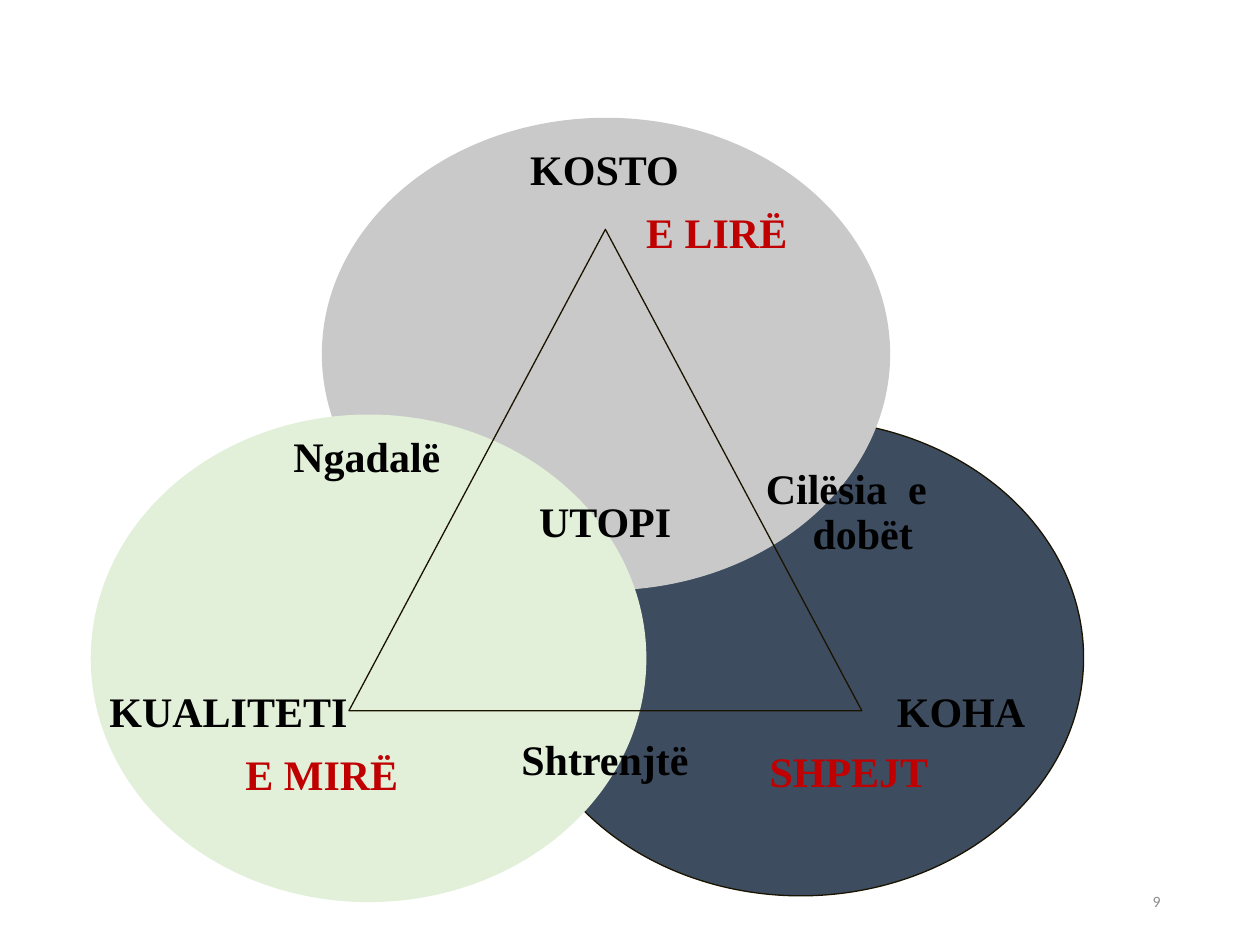
from typing import NamedTuple, Optional

from pptx import Presentation
from pptx.dml.color import RGBColor
from pptx.enum import shapes, text
from pptx.util import Inches, Pt

BLACK = RGBColor(0x00, 0x00, 0x00)
RED = RGBColor(0xC0, 0x00, 0x00)
INK = RGBColor(0x1A, 0x13, 0x00)
NAVY = RGBColor(0x3D, 0x4C, 0x5F)
GREY = RGBColor(0xC9, 0xC9, 0xC9)
GREEN = RGBColor(0xE2, 0xF0, 0xD9)
DIM = RGBColor(0x8C, 0x8C, 0x8C)

OVAL = shapes.MSO_SHAPE.OVAL
TRIANGLE = shapes.MSO_SHAPE.ISOSCELES_TRIANGLE


class Form(NamedTuple):
    kind: shapes.MSO_SHAPE
    left: float
    top: float
    width: float
    height: float
    fill: Optional[RGBColor]
    line: Optional[RGBColor]


class Label(NamedTuple):
    words: str
    left: float
    top: float
    width: float
    color: RGBColor = BLACK
    wrap: bool = False


# Back to front: the circles, then the triangle joining the three goals
FORMS = [
    Form(OVAL, 4.11, 3.33, 4.49, 3.78, NAVY, INK),
    Form(OVAL, 2.56, 0.94, 4.5, 3.74, GREY, GREY),
    Form(OVAL, 0.72, 3.29, 4.41, 3.87, GREEN, None),
    Form(TRIANGLE, 2.77, 1.82, 4.07, 3.82, None, INK),
]

LABELS = [
    # Goals at the corners
    Label("KOSTO", 4.11, 1.09, 1.39),
    Label("KUALITETI", 0.77, 5.39, 2.11),
    Label("KOHA", 7.02, 5.39, 1.23),
    # What each goal promises
    Label("E LIRË", 5.03, 1.59, 1.33, RED),
    Label("E MIRË", 1.85, 5.89, 1.43, RED),
    Label("SHPEJT", 6.01, 5.87, 1.47, RED),
    # Where the circles overlap
    Label("UTOPI", 4.18, 3.88, 1.26),
    Label("Cilësia  e", 5.98, 3.62, 1.74, wrap=True),
    Label("dobët", 6.35, 3.98, 1.01),
    Label("Shtrenjtë", 4.04, 5.77, 1.54),
    Label("Ngadalë", 2.23, 3.37, 1.38),
]


def draw_form(slide, form: Form) -> None:
    shape = slide.shapes.add_shape(
        form.kind, Inches(form.left), Inches(form.top),
        Inches(form.width), Inches(form.height))
    shape.shadow.inherit = False
    if form.fill is None:
        shape.fill.background()
    else:
        shape.fill.solid()
        shape.fill.fore_color.rgb = form.fill
    if form.line is None:
        shape.line.fill.background()
    else:
        shape.line.color.rgb = form.line
        shape.line.width = Pt(0.75)


def add_run(para, words: str, font: str, size: float,
            color: RGBColor, bold: bool = False) -> None:
    run = para.add_run()
    run.text = words
    run.font.name = font
    run.font.size = Pt(size)
    run.font.bold = bold
    run.font.color.rgb = color


def draw_label(slide, label: Label) -> None:
    box = slide.shapes.add_textbox(
        Inches(label.left), Inches(label.top), Inches(label.width), Inches(0.5))
    frame = box.text_frame
    frame.word_wrap = label.wrap
    frame.auto_size = text.MSO_AUTO_SIZE.SHAPE_TO_FIT_TEXT
    add_run(frame.paragraphs[0], label.words, "Times New Roman", 24,
            label.color, bold=True)


def draw_number(slide, number: str) -> None:
    box = slide.shapes.add_textbox(
        Inches(7.06), Inches(6.95), Inches(2.25), Inches(0.4))
    frame = box.text_frame
    frame.word_wrap = True
    frame.vertical_anchor = text.MSO_ANCHOR.MIDDLE
    para = frame.paragraphs[0]
    para.alignment = text.PP_ALIGN.RIGHT
    add_run(para, number, "Calibri", 9, DIM)


def main() -> None:
    deck = Presentation()
    deck.slide_width = Inches(10)
    deck.slide_height = Inches(7.5)
    slide = deck.slides.add_slide(deck.slide_layouts[6])
    for form in FORMS:
        draw_form(slide, form)
    for label in LABELS:
        draw_label(slide, label)
    draw_number(slide, "9")
    deck.save("out.pptx")


if __name__ == "__main__":
    main()
